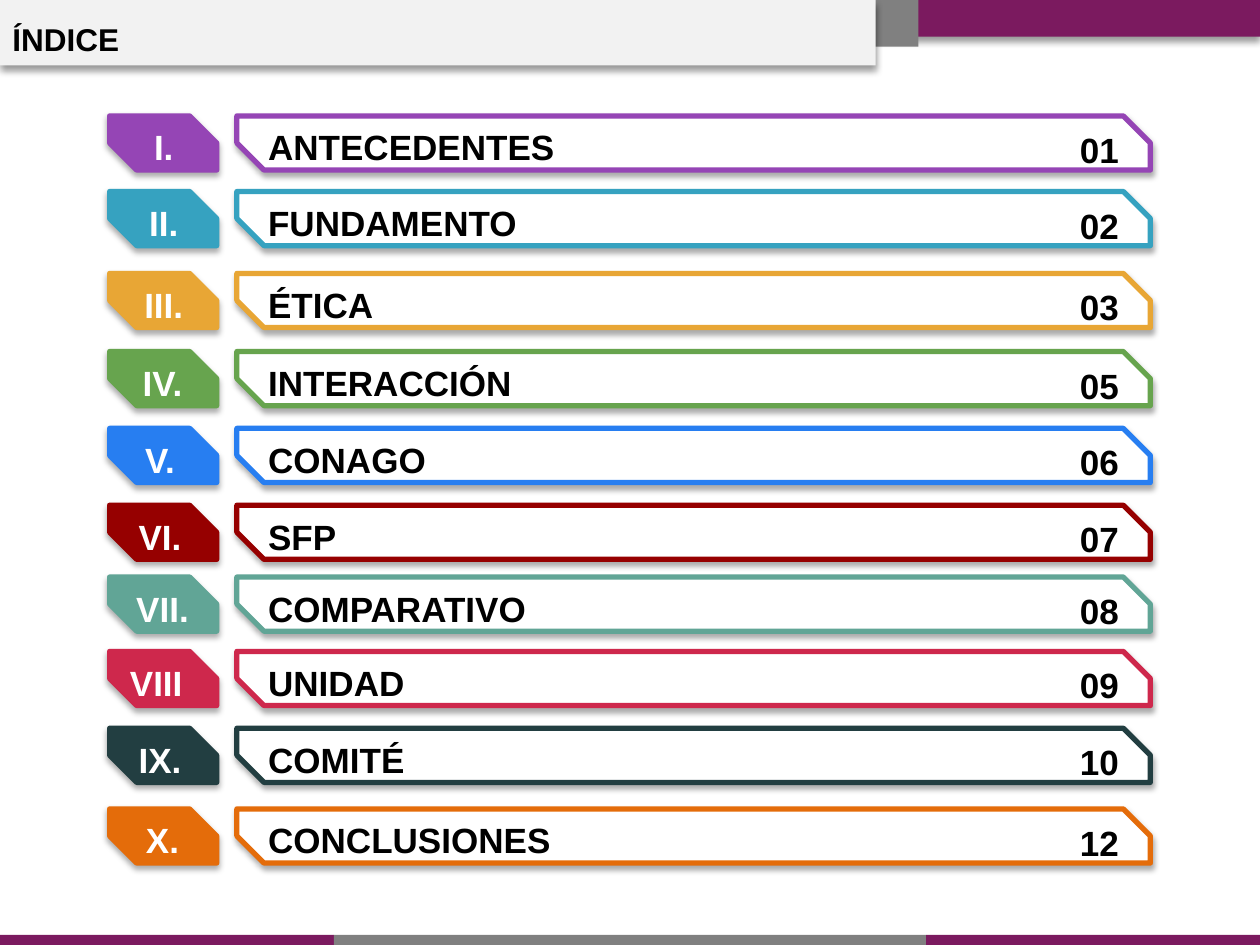
from lxml.etree import SubElement
from pptx import Presentation
from pptx.dml.color import RGBColor
from pptx.enum.shapes import MSO_SHAPE as SHAPE
from pptx.enum.text import MSO_ANCHOR as ANCHOR, PP_ALIGN as ALIGN
from pptx.oxml.ns import qn
from pptx.util import Inches, Pt

COLORS = {
    "plum": "7B1A5F", "gray": "808080", "pale": "F2F2F2",
    "white": "FFFFFF", "black": "000000",
    "purple": "9545B5", "teal": "36A2C0", "amber": "E8A635",
    "green": "67A44E", "blue": "277EF1", "maroon": "960000",
    "sage": "61A596", "crimson": "CE284C", "slate": "223E41",
    "orange": "E46C0A",
}

# Top of the row, numeral, centre of the numeral in the row, title, page, colour
ENTRIES = [
    (0.92, "I.", 0.43, "ANTECEDENTES", "01", "purple"),
    (1.52, "II.", 0.43, "FUNDAMENTO", "02", "teal"),
    (2.17, "III.", 0.43, "ÉTICA", "03", "amber"),
    (2.79, "IV.", 0.42, "INTERACCIÓN", "05", "green"),
    (3.40, "V.", 0.40, "CONAGO", "06", "blue"),
    (4.01, "VI.", 0.40, "SFP", "07", "maroon"),
    (4.58, "VII.", 0.42, "COMPARATIVO", "08", "sage"),
    (5.17, "VIII", 0.37, "UNIDAD", "09", "crimson"),
    (5.78, "IX.", 0.40, "COMITÉ", "10", "slate"),
    (6.42, "X.", 0.42, "CONCLUSIONES", "12", "orange"),
]
ROW_LEFT, ROW_WIDTH, ROW_HEIGHT = 0.87, 8.26, 0.43


def rgb(name):
    return RGBColor.from_string(COLORS[name])


def add_shadow(sp, alpha, blur, dist):
    effects = sp._element.spPr.find(qn("a:effectLst"))
    shadow = SubElement(effects, qn("a:outerShdw"), blurRad=str(Pt(blur)),
                        dist=str(Pt(dist)), dir="5400000", algn="t", rotWithShape="0")
    color = SubElement(shadow, qn("a:srgbClr"), val=COLORS["black"])
    SubElement(color, qn("a:alpha"), val=str(alpha * 1000))


def add_box(s, kind, x, y, w, h, fill, line=None):
    sp = s.shapes.add_shape(kind, Inches(x), Inches(y), Inches(w), Inches(h))
    sp.shadow.inherit = False
    sp.fill.solid()
    sp.fill.fore_color.rgb = rgb(fill)
    if line:
        sp.line.color.rgb = rgb(line)
        sp.line.width = Pt(3)
        SubElement(sp._element.spPr.find(qn("a:ln")), qn("a:round"))
    else:
        sp.line.fill.background()
    return sp


def add_text(s, text, x, y, w, h, size=20, color="black", align=ALIGN.LEFT,
             anchor=ANCHOR.TOP, wrap=True):
    tf = s.shapes.add_textbox(Inches(x), Inches(y), Inches(w), Inches(h)).text_frame
    tf.word_wrap = wrap
    tf.vertical_anchor = anchor
    p = tf.paragraphs[0]
    p.alignment = align
    r = p.add_run()
    r.text = text
    r.font.name = "Arial"
    r.font.size = Pt(size)
    r.font.bold = True
    r.font.color.rgb = rgb(color)


def add_header(s, x, y, w):
    bar = add_box(s, SHAPE.RECTANGLE, x + 4.73, y, w - 4.73, 0.29, "plum")
    add_box(s, SHAPE.RECTANGLE, x + 6.61, y, 0.68, 0.37, "gray")
    panel = add_box(s, SHAPE.RECTANGLE, x, y, 6.95, 0.52, "pale")
    for sp in (bar, panel):
        add_shadow(sp, 40, 4, 3)
    add_text(s, "ÍNDICE", x, y + 0.11, 7.6, 0.4, size=18, anchor=ANCHOR.MIDDLE)


def add_footer(s, x, y, w, h):
    side = 2.65
    add_box(s, SHAPE.RECTANGLE, x, y, side, h, "plum")
    add_box(s, SHAPE.RECTANGLE, x + side, y, w - 2 * side, h, "gray")
    add_box(s, SHAPE.RECTANGLE, x + w - side, y, side, h, "plum")


def add_entry(s, x, y, w, h, numeral, center, title, page, color):
    # Outlined title bar and solid numeral tab
    bar_x = 1.01
    for dx, width, fill in ((bar_x, w - bar_x, "white"), (0, 0.85, color)):
        sp = add_box(s, SHAPE.SNIP_2_DIAG_RECTANGLE, x + dx, y, width, h, fill, color)
        sp.adjustments[0], sp.adjustments[1] = 0, 0.5
        add_shadow(sp, 32, 3.5, 2.2)
    # Numeral, title and page number
    add_text(s, numeral, x + center - 0.35, y + 0.03, 0.7, 0.44, color="white",
             align=ALIGN.CENTER, wrap=False)
    add_text(s, title, x + 1.16, y + 0.03, 6.23, 0.44)
    add_text(s, page, x + 7.55, y + 0.05, 0.61, 0.44, align=ALIGN.CENTER)


def main():
    prs = Presentation()
    prs.slide_width, prs.slide_height = Inches(10), Inches(7.5)
    s = prs.slides.add_slide(prs.slide_layouts[6])
    add_footer(s, 0, 7.42, 10, 0.08)
    add_header(s, 0, 0, 10)
    for top, *entry in ENTRIES:
        add_entry(s, ROW_LEFT, top, ROW_WIDTH, ROW_HEIGHT, *entry)
    prs.save("out.pptx")


if __name__ == "__main__":
    main()
